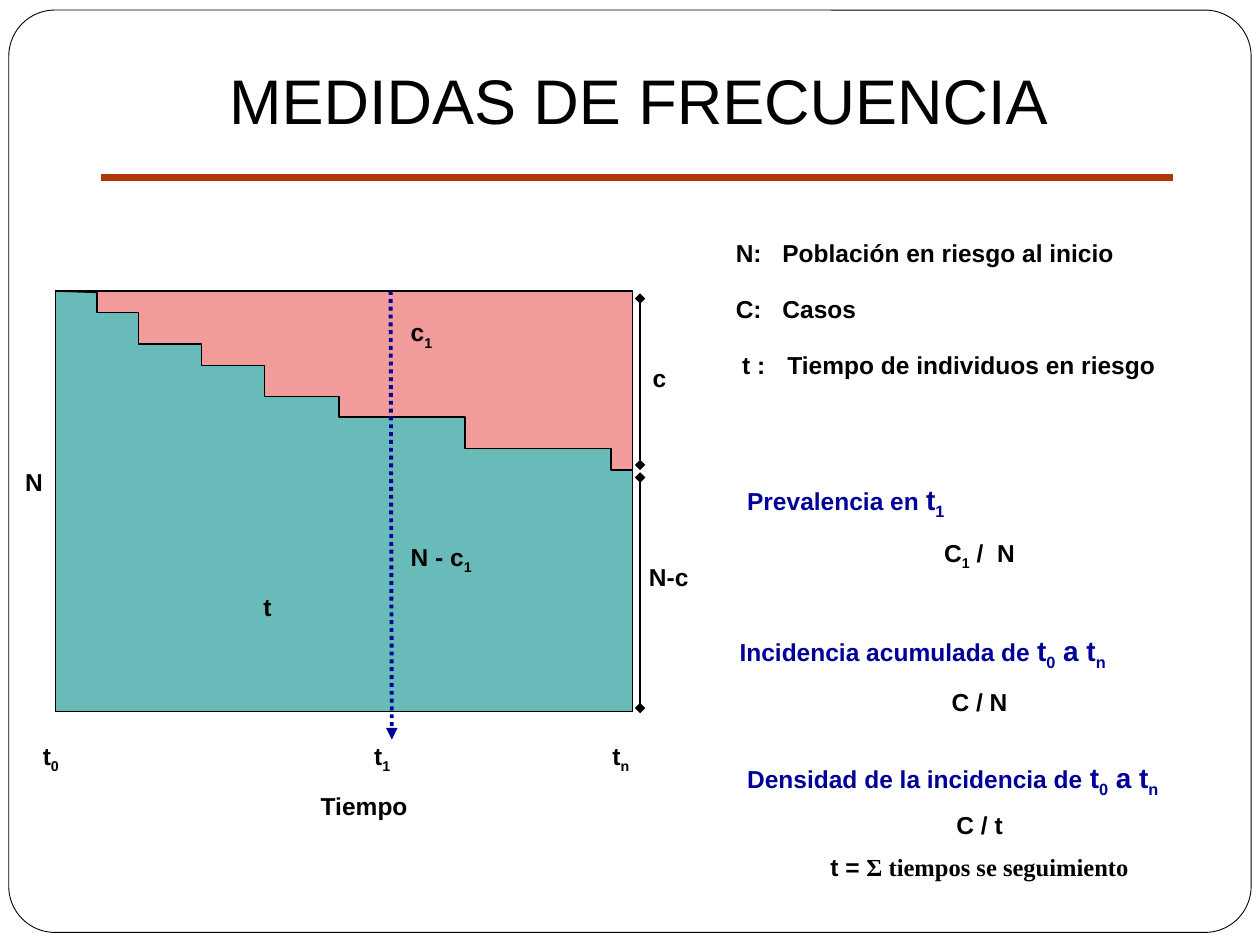
from lxml import etree
from pptx import Presentation
from pptx.dml.color import RGBColor
from pptx.enum.dml import MSO_LINE
from pptx.enum.shapes import MSO_CONNECTOR, MSO_SHAPE
from pptx.enum.text import MSO_ANCHOR, PP_ALIGN
from pptx.oxml.ns import qn
from pptx.util import Inches, Pt

LEFT, CENTER = PP_ALIGN.LEFT, PP_ALIGN.CENTER
BLACK, WHITE, NAVY, RUST = "000000", "FFFFFF", "000099", "B1360B"
PINK, TEAL = "F19B9B", "69BBB9"

# Content: text between bars is set as a subscript
TITLE = "MEDIDAS DE FRECUENCIA"

# term, meaning, left margin, hanging width
DEFINITIONS = [
    ("N:", "Población en riesgo al inicio", 0, 0.37),
    ("C:", "Casos", 0, 0.37),
    ("t :", "Tiempo de individuos en riesgo", 0.05, 0.36),
]

# runs (text, size, colour, font), alignment, line spacing, space before, indent
FORMULAS = [
    ([("Prevalencia en ", 14, NAVY, "Arial"), ("t|1|", 16, NAVY, "Arial")],
     LEFT, 1.5, 0, 0.06),
    ([("C|1| /  N", 14, BLACK, "Arial")], CENTER, 1.5, 0, 0),
    ([("Incidencia acumulada de ", 14, NAVY, "Arial"),
      ("t|0| a t|n|", 16, NAVY, "Arial")], LEFT, 1.5, 25, 0),
    ([("C / N", 14, BLACK, "Arial")], CENTER, 1.5, 0, 0),
    ([("Densidad de la incidencia de ", 14, NAVY, "Arial"),
      ("t|0| a t|n|", 16, NAVY, "Arial")], LEFT, 1.4, 16.5, 0.06),
    ([("C / t", 14, BLACK, "Arial")], CENTER, 1.4, 0, 0),
    ([("t = ", 14, BLACK, "Arial"),
      ("Ʃ tiempos se seguimiento", 14, BLACK, "Times New Roman")],
     CENTER, 1.4, 0, 0),
]

# Diagram: plot edges, then each step's right end and height
PLOT_LEFT, PLOT_TOP, PLOT_RIGHT, PLOT_BOTTOM = 0.44, 2.31, 5.02, 5.65
STEPS = [(0.77, 2.31), (1.1, 2.48), (1.6, 2.73), (2.1, 2.9), (2.69, 3.15),
         (3.69, 3.31), (4.85, 3.56), (5.02, 3.73)]

# text, left, top, width, alignment
LABELS = [
    ("N", 0.19, 3.7, 0.29, LEFT),
    ("c", 5.17, 2.87, 0.44, LEFT),
    ("N-c", 5.14, 4.45, 0.82, LEFT),
    ("t", 2.08, 4.69, 0.29, LEFT),
    ("t|0|", 0.33, 5.87, 0.29, LEFT),
    ("t|1|", 2.96, 5.87, 0.29, LEFT),
    ("t|n|", 4.85, 5.87, 0.29, LEFT),
    ("Tiempo", 2.38, 6.27, 1.02, CENTER),
    ("c|1|", 3.25, 2.51, 0.44, LEFT),
    ("N - c|1|", 3.25, 4.29, 0.73, LEFT),
]


def rgb(value):
    return RGBColor.from_string(value)


def style_shape(shape, fill, width):
    shape.shadow.inherit = False
    shape.fill.solid()
    shape.fill.fore_color.rgb = rgb(fill)
    shape.line.color.rgb = rgb(BLACK)
    shape.line.width = Pt(width)


def add_outline(slide, points, fill):
    points = [(Inches(x), Inches(y)) for x, y in points]
    builder = slide.shapes.build_freeform(*points[0], scale=1.0)
    builder.add_line_segments(points[1:], close=True)
    style_shape(builder.convert_to_shape(), fill, 0.75)


def add_line(slide, start, end, color, width, dash=None, head=None, tail=None):
    line = slide.shapes.add_connector(
        MSO_CONNECTOR.STRAIGHT, *(Inches(v) for v in (*start, *end)))
    line.line.color.rgb = rgb(color)
    line.line.width = Pt(width)
    if dash:
        line.line.dash_style = dash
    outline = line.line._get_or_add_ln()
    for tag, arrow in (("a:headEnd", head), ("a:tailEnd", tail)):
        if arrow:
            etree.SubElement(outline, qn(tag), type=arrow)
    etree.SubElement(line._element.spPr, qn("a:effectLst"))


def add_text_frame(slide, left, top, width, height):
    box = slide.shapes.add_textbox(*(Inches(v) for v in (left, top, width, height)))
    frame = box.text_frame
    frame.word_wrap = True
    frame.margin_left = frame.margin_right = Inches(0.01)
    frame.margin_top = frame.margin_bottom = Inches(0.01)
    return frame


def add_runs(paragraph, text, size=14, color=BLACK, font="Arial", bold=True):
    for index, piece in enumerate(text.split("|")):
        if not piece:
            continue
        run = paragraph.add_run()
        run.text = piece
        run.font.size = Pt(size)
        run.font.name = font
        run.font.bold = bold
        run.font.color.rgb = rgb(color)
        if index % 2:
            run.font._element.set("baseline", "-25000")


def next_paragraph(frame, index):
    return frame.add_paragraph() if index else frame.paragraphs[0]


def set_indent(paragraph, margin, hanging=0):
    properties = paragraph._p.get_or_add_pPr()
    properties.set("marL", str(Inches(margin + hanging)))
    properties.set("indent", str(-Inches(hanging)))


presentation = Presentation()
presentation.slide_width = Inches(10)
presentation.slide_height = Inches(7.5)
slide = presentation.slides.add_slide(presentation.slide_layouts[6])

# Frame, title and rule
border = slide.shapes.add_shape(
    MSO_SHAPE.ROUNDED_RECTANGLE, *(Inches(v) for v in (0.07, 0.08, 9.86, 7.32)))
border.adjustments[0] = 0.05
style_shape(border, WHITE, 0.5)

title = add_text_frame(slide, 0.82, 0.16, 8.5, 1.25)
title.vertical_anchor = MSO_ANCHOR.MIDDLE
title.paragraphs[0].alignment = CENTER
add_runs(title.paragraphs[0], TITLE, size=36, bold=False)
add_line(slide, (0.8, 1.41), (9.31, 1.41), RUST, 4)

# Definitions
definitions = add_text_frame(slide, 5.83, 1.67, 3.83, 1.76)
for index, (term, meaning, margin, hanging) in enumerate(DEFINITIONS):
    paragraph = next_paragraph(definitions, index)
    paragraph.line_spacing = 1.9
    set_indent(paragraph, margin, hanging)
    add_runs(paragraph, f"{term}\t{meaning}")

# Population area with the stepped survivors in front
add_outline(slide, [(PLOT_LEFT, PLOT_TOP), (PLOT_RIGHT, PLOT_TOP),
                    (PLOT_RIGHT, PLOT_BOTTOM), (PLOT_LEFT, PLOT_BOTTOM)], PINK)
stairs = [(PLOT_LEFT, PLOT_BOTTOM)]
step_left = PLOT_LEFT
for step_right, height in STEPS:
    stairs += [(step_left, height), (step_right, height)]
    step_left = step_right
add_outline(slide, stairs + [(PLOT_RIGHT, PLOT_BOTTOM)], TEAL)

# Time marker and measuring lines
add_line(slide, (0.48, 2.31), (0.77, 2.32), BLACK, 1)
add_line(slide, (3.1, 2.31), (3.11, 5.87), NAVY, 2.25,
         dash=MSO_LINE.ROUND_DOT, tail="triangle")
for top, bottom in [(2.37, 3.69), (3.79, 5.62)]:
    add_line(slide, (5.08, top), (5.08, bottom), BLACK, 0.75,
             head="diamond", tail="diamond")

# Diagram labels
for text, left, top, width, alignment in LABELS:
    paragraph = add_text_frame(slide, left, top, width, 0.4).paragraphs[0]
    paragraph.alignment = alignment
    add_runs(paragraph, text)

# Formulas
formulas = add_text_frame(slide, 5.86, 3.67, 3.83, 3.29)
for index, (runs, alignment, spacing, before, indent) in enumerate(FORMULAS):
    paragraph = next_paragraph(formulas, index)
    paragraph.alignment = alignment
    paragraph.line_spacing = spacing
    paragraph.space_before = Pt(before)
    set_indent(paragraph, indent)
    for run in runs:
        add_runs(paragraph, *run)

presentation.save("out.pptx")
